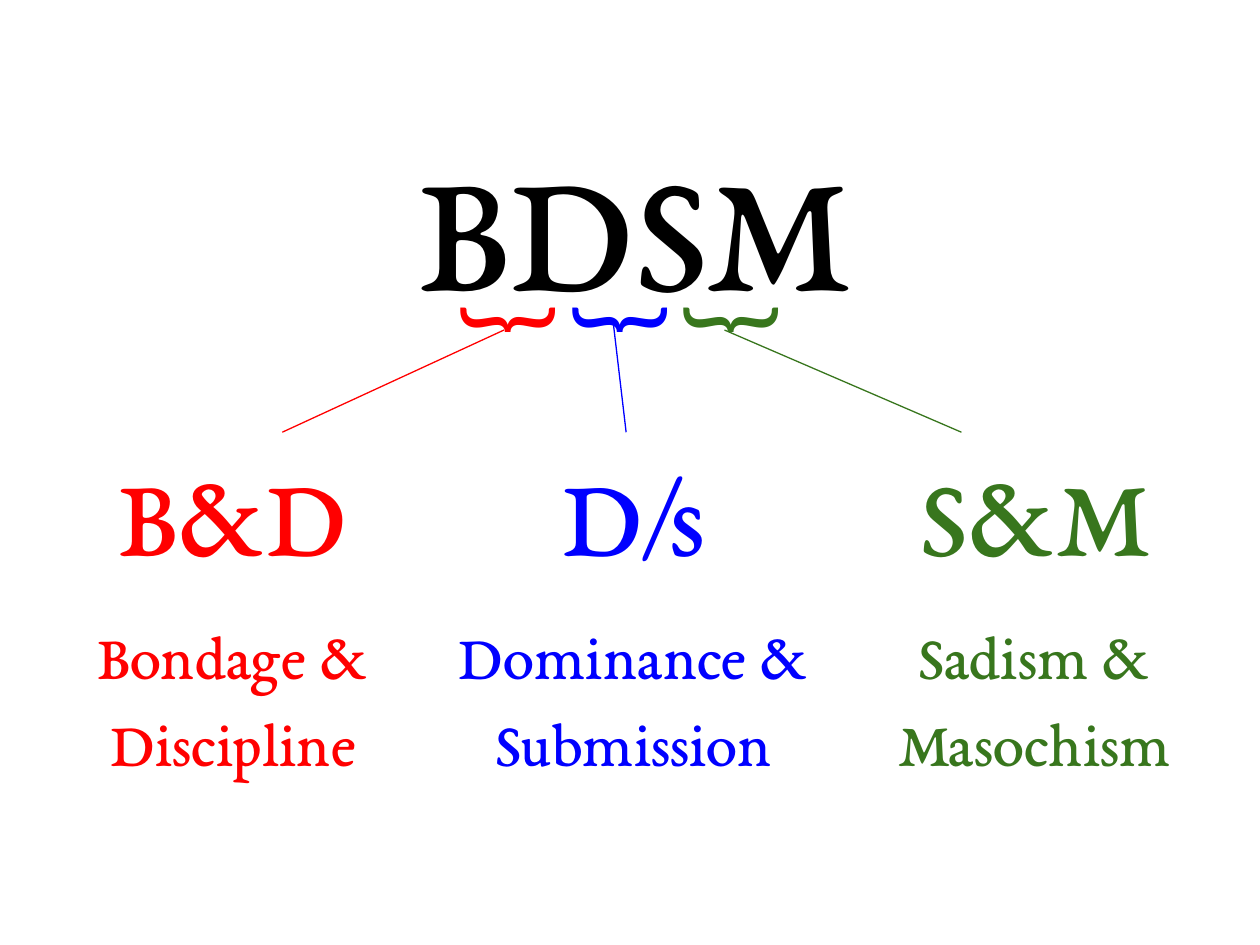
from lxml import etree
from pptx import Presentation
from pptx.dml.color import RGBColor
from pptx.enum.shapes import MSO_CONNECTOR
from pptx.enum.text import MSO_ANCHOR, MSO_AUTO_SIZE, PP_ALIGN
from pptx.oxml.ns import qn
from pptx.util import Pt

STRAIGHT = MSO_CONNECTOR.STRAIGHT
TOP, BOTTOM = MSO_ANCHOR.TOP, MSO_ANCHOR.BOTTOM
NO_FIT, GROW = MSO_AUTO_SIZE.NONE, MSO_AUTO_SIZE.SHAPE_TO_FIT_TEXT
CENTER = PP_ALIGN.CENTER
COMPARISON_LAYOUT = 4
SERIF, BRACE_FONT = "EB Garamond", "Calibri"
COLORS = {"black": "000000", "red": "FF0000", "blue": "0000FF", "green": "38761D"}

COLUMN_LEFT, COLUMN_STEP = 24.5, 229
BRACE_LEFT, BRACE_STEP = 266.6, 63.7
COLUMNS = [
    ("B&D", "Bondage & Discipline", "red", (288, 188.6), (161.3, 247)),
    ("D/s", "Dominance & Submission", "blue", (350.6, 185.8), (357.8, 247)),
    ("S&M", "Sadism & Masochism", "green", (414, 188.6), (549.4, 247)),
]


def place(shape, box):
    """Move a shape to a (left, top, width, height) box in points."""
    shape.left, shape.top, shape.width, shape.height = map(Pt, box)


def set_frame(shape, anchor, fit):
    """Give a text shape its insets, anchor and fitting."""
    frame = shape.text_frame
    frame.word_wrap = True
    frame.auto_size = fit
    frame.vertical_anchor = anchor
    frame.margin_left = frame.margin_right = Pt(7.2)
    frame.margin_top = frame.margin_bottom = Pt(7.2)
    return frame


def style_font(para, name, size, color):
    """Format the runs of a paragraph."""
    for span in para.runs:
        span.font.name = name
        span.font.size = Pt(size)
        span.font.bold = False
        span.font.color.rgb = RGBColor.from_string(COLORS[color])


def style_centered(para, size, color, before=0):
    """Make a centred serif paragraph without a bullet."""
    properties = para._p.get_or_add_pPr()
    properties.set("marL", "0")
    properties.set("indent", "0")
    etree.SubElement(properties, qn("a:buNone"))
    para.alignment = CENTER
    para.line_spacing = 1.15
    para.space_before = Pt(before)
    style_font(para, SERIF, size, color)


def fill_title(title, box):
    """Write the acronym in the title placeholder."""
    place(title, box)
    frame = set_frame(title, BOTTOM, NO_FIT)
    frame.text = "BDSM"
    style_centered(frame.paragraphs[0], 100, "black")


def fill_column(body, box, short, meaning, color):
    """Write a letter pair and its meaning in a body placeholder."""
    place(body, box)
    frame = set_frame(body, TOP, NO_FIT)
    frame.text = f"{short}\n{meaning}"
    heading, detail = frame.paragraphs
    style_centered(heading, 65, color)
    style_centered(detail, 36, color, before=15)


def add_brace(page, box, color):
    """Add a brace turned to open upwards."""
    brace = page.shapes.add_textbox(*map(Pt, box))
    brace.rotation = 270
    frame = set_frame(brace, TOP, GROW)
    frame.text = "{"
    style_font(frame.paragraphs[0], BRACE_FONT, 63, color)


def add_line(page, start, end, color):
    """Draw a thin line from a brace towards its column."""
    line = page.shapes.add_connector(STRAIGHT, *map(Pt, start + end))
    line.line.color.rgb = RGBColor.from_string(COLORS[color])
    line.line.width = Pt(0.75)
    etree.SubElement(line._element.spPr, qn("a:effectLst"))


def build_acronym_page(deck):
    """Build the page that splits the acronym into three pairs."""
    page = deck.slides.add_slide(deck.slide_layouts[COMPARISON_LAYOUT])
    title, *bodies = page.placeholders
    fill_title(title, (24.5, 30.2, 675.4, 163.4))
    for index, (body, column) in enumerate(zip(bodies, COLUMNS)):
        short, meaning, color, start, end = column
        column_box = (COLUMN_LEFT + index * COLUMN_STEP, 234, 217.4, 290.9)
        fill_column(body, column_box, short, meaning, color)
        brace_box = (BRACE_LEFT + index * BRACE_STEP, 136.1, 35.3, 90.7)
        add_brace(page, brace_box, color)
        add_line(page, start, end, color)
    for spare in bodies[len(COLUMNS):]:
        spare._element.getparent().remove(spare._element)


def main():
    """Create the deck and save it."""
    deck = Presentation()
    deck.slide_width, deck.slide_height = Pt(720), Pt(540)
    build_acronym_page(deck)
    deck.save("out.pptx")


if __name__ == "__main__":
    main()
